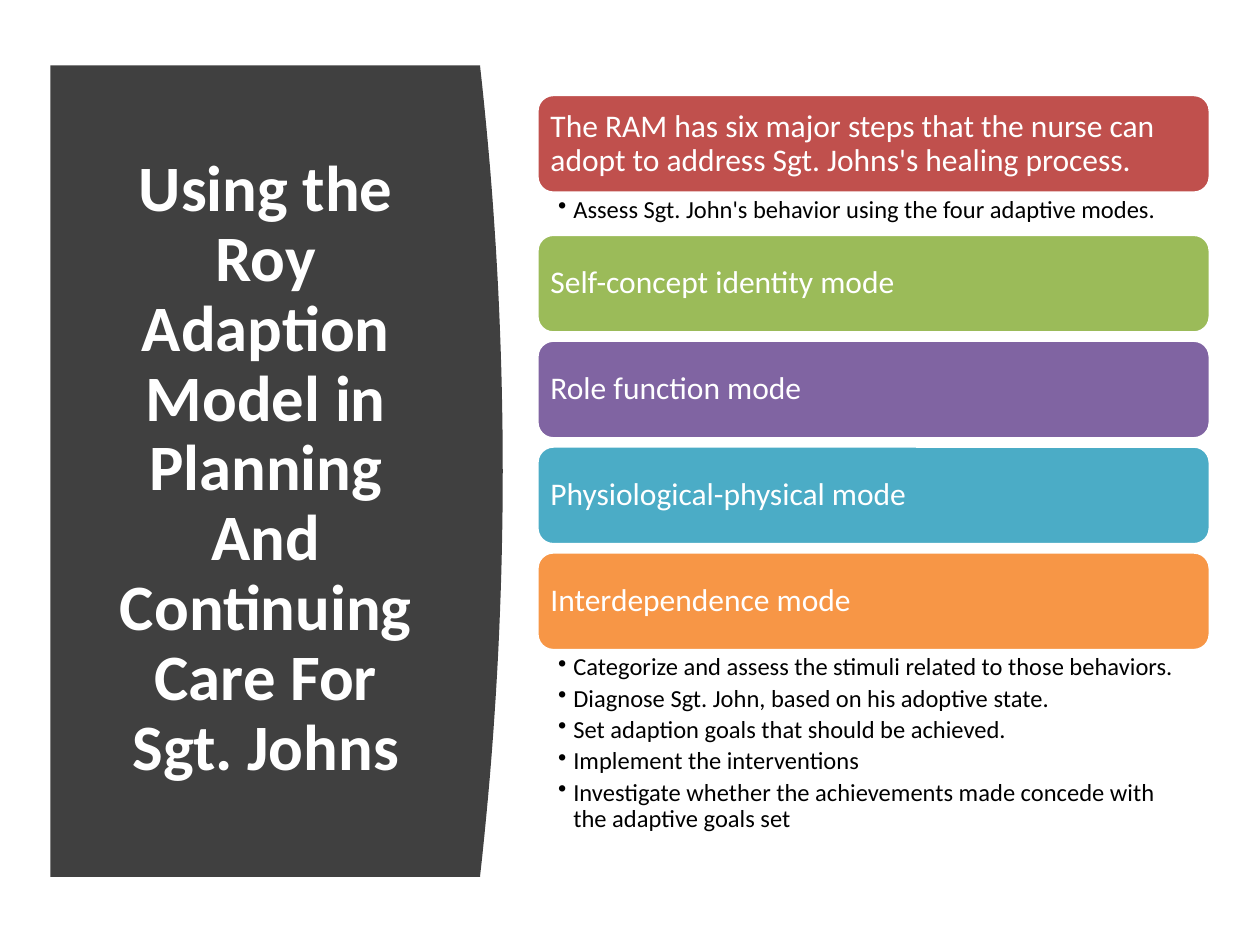
from dataclasses import dataclass

from lxml.etree import SubElement
from pptx import Presentation
from pptx.dml.color import RGBColor
from pptx.enum.shapes import MSO_SHAPE
from pptx.enum.text import MSO_ANCHOR, PP_ALIGN
from pptx.oxml.ns import qn
from pptx.slide import Slide
from pptx.text.text import TextFrame, _Paragraph
from pptx.util import Pt

FONT = "Calibri"
WHITE, BLACK, CHARCOAL = "FFFFFF", "000000", "404040"

PANEL_LEFT, PANEL_RIGHT = 28.8, 274.3
PANEL_TOP, PANEL_BOTTOM = 37.4, 501.1
BULGE, CURVE_STEPS = 13, 40

STEPS_LEFT, STEPS_TOP, STEPS_WIDTH = 306.8, 54, 384.8
BANNER_HEIGHT, BANNER_GAP = 56.4, 4.1


@dataclass(frozen=True)
class Step:
    heading: str
    color: str
    details: tuple[str, ...] = ()
    details_height: float = 0


TITLE = "Using the Roy Adaption Model in Planning And Continuing Care For Sgt. Johns"

STEPS = (
    Step(
        "The RAM has six major steps that the nurse can adopt to address Sgt. Johns's healing process.",
        "C0504D",
        ("Assess Sgt. John's behavior using the four adaptive modes.",),
        23.5,
    ),
    Step("Self-concept identity mode", "9BBB59"),
    Step("Role function mode", "8064A2"),
    Step("Physiological-physical mode", "4BACC6"),
    Step(
        "Interdependence mode",
        "F79646",
        (
            "Categorize and assess the stimuli related to those behaviors.",
            "Diagnose Sgt. John, based on his adoptive state.",
            "Set adaption goals that should be achieved.",
            "Implement the interventions",
            "Investigate whether the achievements made concede with the adaptive goals set",
        ),
        111.6,
    ),
)


def rgb(color: str) -> RGBColor:
    return RGBColor.from_string(color)


def set_frame(frame: TextFrame, left: float, top: float, right: float,
              bottom: float, anchor: MSO_ANCHOR) -> None:
    frame.word_wrap = True
    frame.vertical_anchor = anchor
    frame.margin_left, frame.margin_top = Pt(left), Pt(top)
    frame.margin_right, frame.margin_bottom = Pt(right), Pt(bottom)


def style_paragraph(paragraph: _Paragraph, size: float, color: str,
                    align: PP_ALIGN = PP_ALIGN.LEFT, bold: bool = False) -> None:
    paragraph.alignment = align
    paragraph.line_spacing = 0.9
    for run in paragraph.runs:
        run.font.name = FONT
        run.font.size = Pt(size)
        run.font.bold = bold
        run.font.color.rgb = rgb(color)


def add_bullet(paragraph: _Paragraph) -> None:
    properties = paragraph._p.get_or_add_pPr()
    properties.set("marL", str(Pt(8.64)))
    properties.set("indent", str(Pt(-8.64)))
    SubElement(properties, qn("a:buChar")).set("char", "•")


def draw_panel(slide: Slide) -> None:
    height = PANEL_BOTTOM - PANEL_TOP
    curve = []
    for index in range(CURVE_STEPS + 1):
        fraction = index / CURVE_STEPS
        bulge = BULGE * 4 * fraction * (1 - fraction)
        curve.append((Pt(PANEL_RIGHT + bulge), Pt(PANEL_TOP + height * fraction)))
    builder = slide.shapes.build_freeform(Pt(PANEL_LEFT), Pt(PANEL_TOP))
    builder.add_line_segments([*curve, (Pt(PANEL_LEFT), Pt(PANEL_BOTTOM))], close=True)
    panel = builder.convert_to_shape()
    panel.shadow.inherit = False
    panel.fill.solid()
    panel.fill.fore_color.rgb = rgb(CHARCOAL)
    panel.line.fill.background()


def draw_title(slide: Slide) -> None:
    title = slide.shapes.add_textbox(Pt(51.1), Pt(79.9), Pt(201.6), Pt(377.3))
    frame = title.text_frame
    set_frame(frame, 7.2, 3.6, 7.2, 3.6, MSO_ANCHOR.MIDDLE)
    frame.text = TITLE
    style_paragraph(frame.paragraphs[0], 37, WHITE, PP_ALIGN.CENTER, bold=True)


def draw_banner(slide: Slide, step: Step, top: float) -> None:
    banner = slide.shapes.add_shape(
        MSO_SHAPE.ROUNDED_RECTANGLE,
        Pt(STEPS_LEFT), Pt(top), Pt(STEPS_WIDTH), Pt(BANNER_HEIGHT),
    )
    banner.shadow.inherit = False
    banner.fill.solid()
    banner.fill.fore_color.rgb = rgb(step.color)
    banner.line.color.rgb = rgb(WHITE)
    banner.line.width = Pt(2)
    set_frame(banner.text_frame, 5, 5, 5, 5, MSO_ANCHOR.MIDDLE)
    banner.text_frame.text = step.heading
    style_paragraph(banner.text_frame.paragraphs[0], 18, WHITE)


def draw_details(slide: Slide, step: Step, top: float) -> None:
    details = slide.shapes.add_textbox(
        Pt(STEPS_LEFT), Pt(top), Pt(STEPS_WIDTH), Pt(step.details_height)
    )
    frame = details.text_frame
    set_frame(frame, 12.2, 2.2, 10, 2.2, MSO_ANCHOR.TOP)
    frame.text = "\n".join(step.details)
    for paragraph in frame.paragraphs:
        style_paragraph(paragraph, 14, BLACK)
        paragraph.space_after = Pt(2.8)
        add_bullet(paragraph)


def draw_steps(slide: Slide) -> None:
    top = STEPS_TOP
    for step in STEPS:
        draw_banner(slide, step, top)
        top += BANNER_HEIGHT
        if step.details:
            draw_details(slide, step, top)
            top += step.details_height
        else:
            top += BANNER_GAP


def main() -> None:
    presentation = Presentation()
    presentation.slide_width, presentation.slide_height = Pt(720), Pt(540)
    slide = presentation.slides.add_slide(presentation.slide_layouts[6])
    draw_panel(slide)
    draw_title(slide)
    draw_steps(slide)
    presentation.save("out.pptx")


if __name__ == "__main__":
    main()
